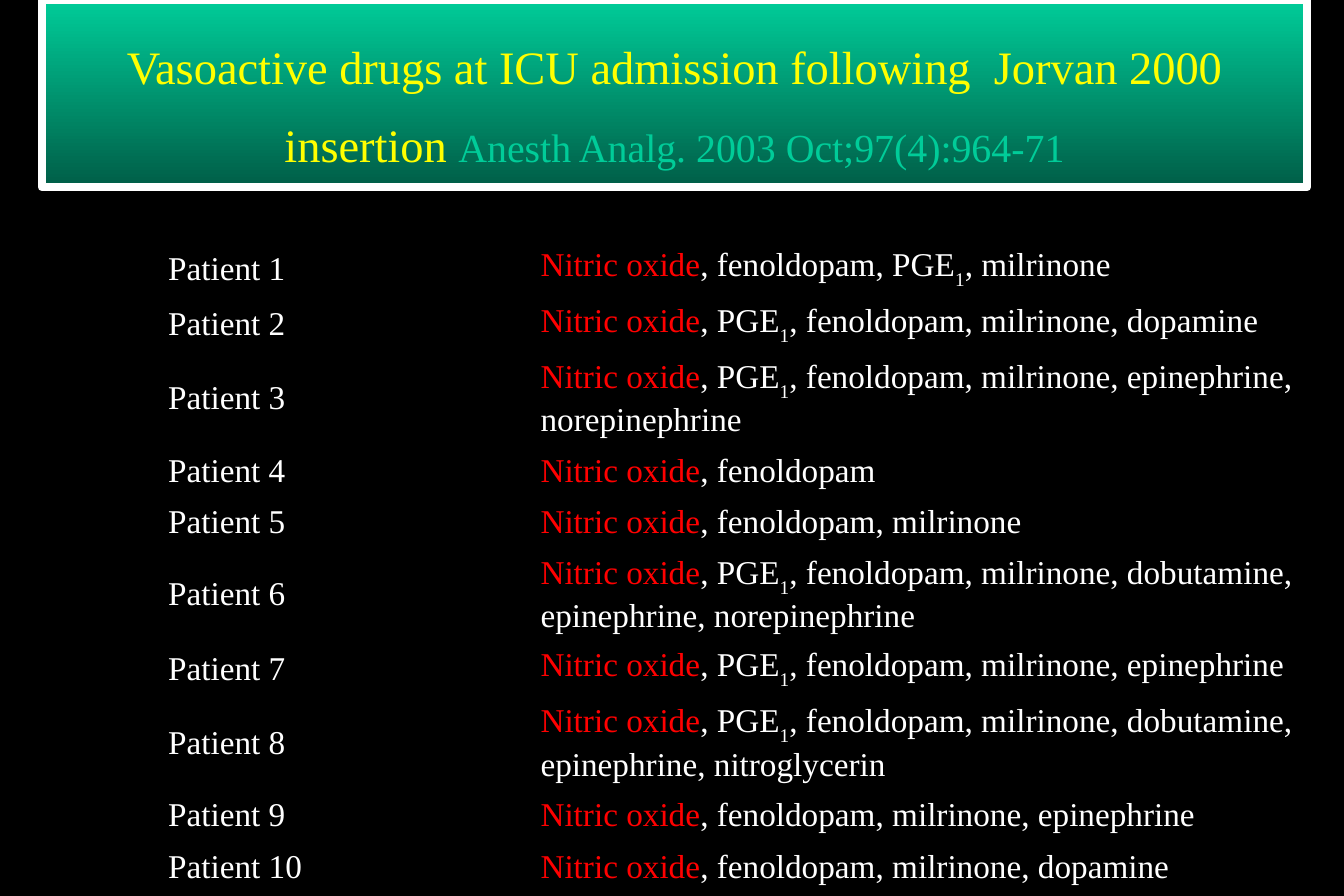
from pptx import Presentation
from pptx.dml.color import RGBColor
from pptx.enum.text import MSO_ANCHOR, MSO_AUTO_SIZE, PP_ALIGN
from pptx.util import Emu, Pt

MIDDLE = MSO_ANCHOR.MIDDLE
CENTER = PP_ALIGN.CENTER
NO_FIT = MSO_AUTO_SIZE.NONE

PX = 7620  # 120 px to the inch
THEME = {
    "font": "Times New Roman",
    "back": "000000", "text": "FFFFFF", "alert": "FF0000",
    "title": "FFFF00", "cite": "00CC99", "top": "00CC99", "base": "005E47",
    "title_pt": 28, "cite_pt": 24, "body_pt": 20, "line_pt": 5,
}
PLAIN = "{2D5ABB26-0587-4C30-8999-92F81FD0307C}"  # no style, no grid

MAIN = "Nitric oxide"
DRUGS = [
    "fenoldopam, PGE1, milrinone",
    "PGE1, fenoldopam, milrinone, dopamine",
    "PGE1, fenoldopam, milrinone, epinephrine, norepinephrine",
    "fenoldopam",
    "fenoldopam, milrinone",
    "PGE1, fenoldopam, milrinone, dobutamine, epinephrine, norepinephrine",
    "PGE1, fenoldopam, milrinone, epinephrine",
    "PGE1, fenoldopam, milrinone, dobutamine, epinephrine, nitroglycerin",
    "fenoldopam, milrinone, epinephrine",
    "fenoldopam, milrinone, dopamine",
]
COLS = [407, 868]
ROW, TALL = 52, 92
WRAP = 45  # characters that fit on one line after the main drug


def px(count):
    return Emu(count * PX)


def write(para, text, color="text", size="body_pt", sub=False):
    run = para.add_run()
    run.text = text
    run.font.name = THEME["font"]
    run.font.size = Pt(THEME[size])
    run.font.color.rgb = RGBColor.from_string(THEME[color])
    if sub:
        run.font._element.set("baseline", "-30000")


deck = Presentation()
deck.slide_width, deck.slide_height = px(1350), px(900)
slide = deck.slides.add_slide(deck.slide_layouts[5])
slide.background.fill.solid()
slide.background.fill.fore_color.rgb = RGBColor.from_string(THEME["back"])

# Title band
title = slide.shapes.title
title.left, title.top, title.width, title.height = px(42), px(0), px(1271), px(188)
title.fill.gradient()
title.fill.gradient_angle = 270
for stop, place, tone in zip(title.fill.gradient_stops, (0, 1), ("top", "base")):
    stop.position = place
    stop.color.rgb = RGBColor.from_string(THEME[tone])
title.line.color.rgb = RGBColor.from_string(THEME["text"])
title.line.width = Pt(THEME["line_pt"])
frame = title.text_frame
frame.word_wrap = True
frame.auto_size = NO_FIT
frame.vertical_anchor = MIDDLE
para = frame.paragraphs[0]
para.alignment = CENTER
para.line_spacing = 1.4
write(para, "Vasoactive drugs at ICU admission following  Jorvan 2000", "title", "title_pt")
para.add_line_break()
write(para, "insertion ", "title", "title_pt")
write(para, "Anesth Analg. 2003 Oct;97(4):964-71", "cite", "cite_pt")

# Patient table
rows = [TALL if len(drugs) > WRAP else ROW for drugs in DRUGS]
holder = slide.shapes.add_table(
    len(rows), len(COLS), px(124), px(242), px(sum(COLS)), px(sum(rows)))
holder.element.xpath(".//a:tableStyleId")[0].text = PLAIN
table = holder.table
table.first_row = table.horz_banding = False
for col, width in zip(table.columns, COLS):
    col.width = px(width)
for num, (drugs, height) in enumerate(zip(DRUGS, rows)):
    table.rows[num].height = px(height)
    name, list_cell = table.rows[num].cells
    for cell in (name, list_cell):
        cell.fill.background()
        cell.vertical_anchor = MIDDLE
    name.margin_left = px(45)
    write(name.text_frame.paragraphs[0], f"Patient {num + 1}")
    para = list_cell.text_frame.paragraphs[0]
    write(para, MAIN, "alert")
    head, mark, tail = f", {drugs}".partition("1")
    write(para, head)
    if mark:
        write(para, mark, sub=True)
        write(para, tail)

deck.save("out.pptx")
